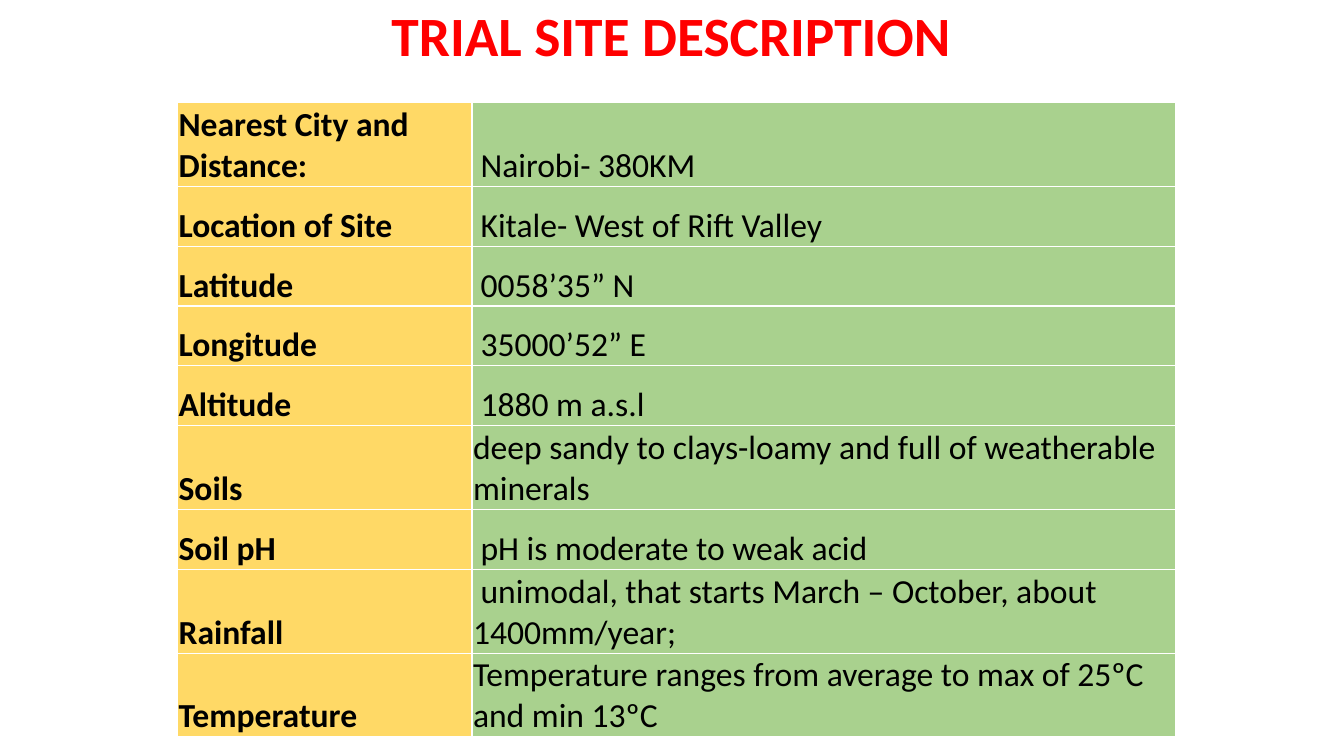
"""Builds the trial site description slide with its table of site facts."""
from lxml.etree import SubElement
from pptx import Presentation
from pptx.dml.color import RGBColor
from pptx.enum.text import MSO_ANCHOR as Anchor, PP_ALIGN as Align
from pptx.oxml.ns import qn
from pptx.util import Pt

TITLE = "TRIAL SITE DESCRIPTION"
TALL, SHORT = 60, 42.65
FACTS = [
    ("Nearest City and Distance:", " Nairobi- 380KM", TALL),
    ("Location of Site", " Kitale- West of Rift Valley", SHORT),
    ("Latitude", " 0058’35” N", SHORT),
    ("Longitude", " 35000’52” E", SHORT),
    ("Altitude", " 1880 m a.s.l", SHORT),
    ("Soils", "deep sandy to clays-loamy and full of weatherable minerals", TALL),
    ("Soil pH", " pH is moderate to weak acid", SHORT),
    ("Rainfall", " unimodal, that starts March – October, about 1400mm/year;", TALL),
    ("Temperature", "Temperature ranges from average to max of 25ºC and min 13ºC", TALL),
]
COLUMN_WIDTHS = (210.3, 502.9)
TABLE_LEFT, TABLE_TOP = 126.9, 73.4
FONT = "Calibri"
RED = RGBColor(0xFF, 0x00, 0x00)
BLACK = RGBColor(0x00, 0x00, 0x00)
YELLOW = RGBColor(0xFF, 0xD9, 0x66)
GREEN = RGBColor(0xA9, 0xD1, 0x8E)
WHITE = RGBColor(0xFF, 0xFF, 0xFF)


def style_text(para, size, color, bold):
    for span in para.runs:
        span.font.name = FONT
        span.font.size = Pt(size)
        span.font.bold = bold
        span.font.color.rgb = color


def add_title(page):
    box = page.shapes.add_textbox(Pt(169.2), Pt(11.5), Pt(620.6), Pt(32.4))
    frame = box.text_frame
    frame.word_wrap = True
    frame.vertical_anchor = Anchor.MIDDLE
    frame.text = TITLE
    para = frame.paragraphs[0]
    para.alignment = Align.CENTER
    para.line_spacing = 0.9
    style_text(para, 39.6, RED, True)


def add_borders(cell):
    properties = cell._tc.get_or_add_tcPr()
    for side in ("lnL", "lnR", "lnT", "lnB"):
        line = SubElement(properties, qn(f"a:{side}"), w=str(Pt(1)))
        fill = SubElement(line, qn("a:solidFill"))
        SubElement(fill, qn("a:srgbClr"), val=str(WHITE))


def fill_cell(cell, text, color, bold):
    add_borders(cell)
    cell.fill.solid()
    cell.fill.fore_color.rgb = color
    cell.vertical_anchor = Anchor.BOTTOM
    cell.margin_left = cell.margin_right = cell.margin_top = Pt(0.7)
    cell.margin_bottom = Pt(0)
    cell.text_frame.text = text
    style_text(cell.text_frame.paragraphs[0], 24, BLACK, bold)


def add_facts(page):
    height = sum(fact[2] for fact in FACTS)
    table = page.shapes.add_table(
        len(FACTS), len(COLUMN_WIDTHS), Pt(TABLE_LEFT), Pt(TABLE_TOP),
        Pt(sum(COLUMN_WIDTHS)), Pt(height)).table
    table.first_row = table.horz_banding = False
    for column, width in zip(table.columns, COLUMN_WIDTHS):
        column.width = Pt(width)
    for row, (label, value, row_height) in zip(table.rows, FACTS):
        row.height = Pt(row_height)
        fill_cell(row.cells[0], label, YELLOW, True)
        fill_cell(row.cells[1], value, GREEN, False)


def main():
    deck = Presentation()
    deck.slide_width, deck.slide_height = Pt(960), Pt(540)
    page = deck.slides.add_slide(deck.slide_layouts[6])
    add_title(page)
    add_facts(page)
    deck.save("out.pptx")


if __name__ == "__main__":
    main()
